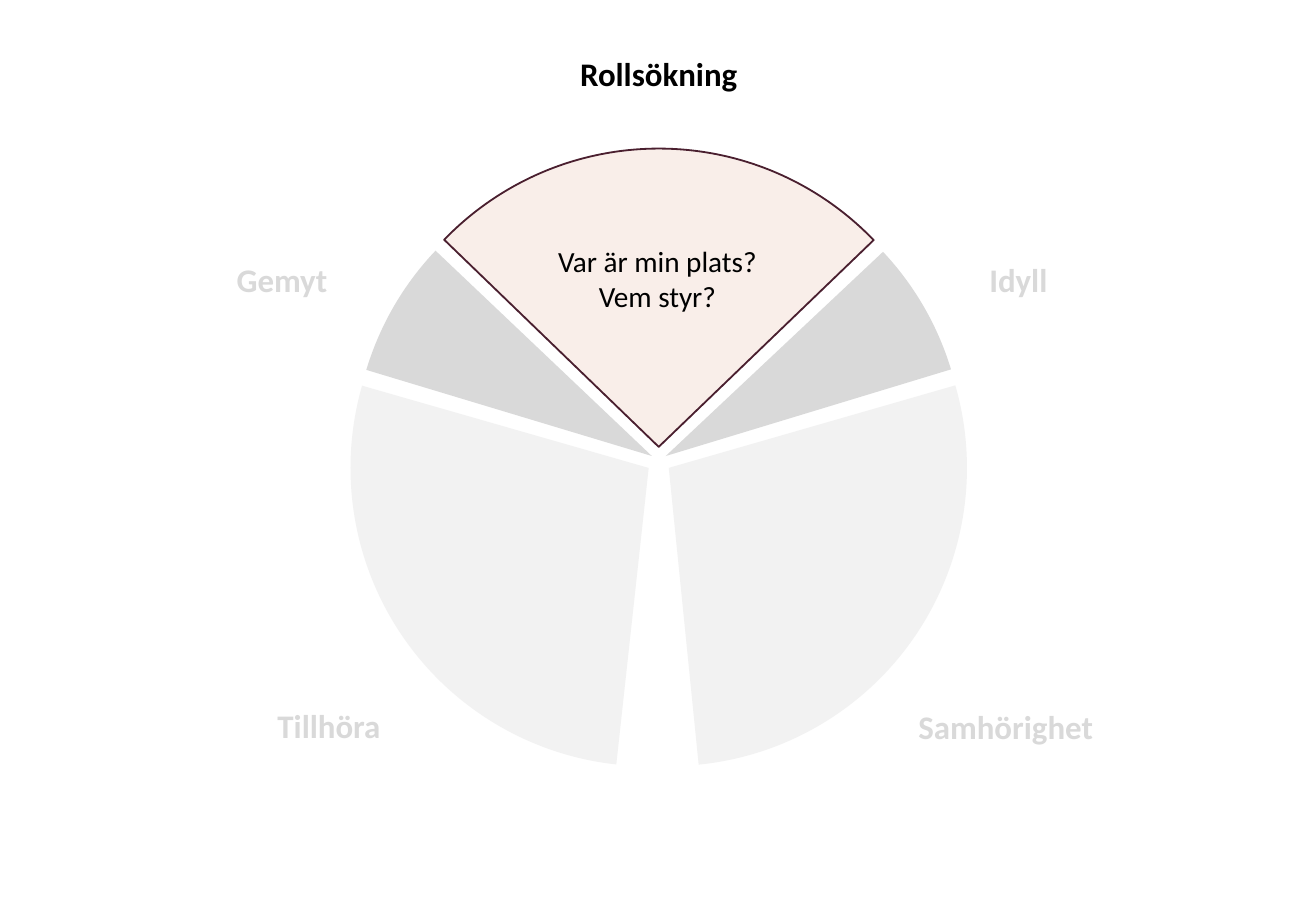
"""Build a slide with a five-part wheel that highlights the role-seeking stage."""
from pptx import Presentation
from pptx.dml.color import RGBColor
from pptx.enum.shapes import MSO_SHAPE
from pptx.enum.text import MSO_AUTO_SIZE, PP_ALIGN
from pptx.util import Pt

PIE = MSO_SHAPE.PIE
FIT = MSO_AUTO_SIZE.SHAPE_TO_FIT_TEXT
CENTER, LEFT = PP_ALIGN.CENTER, PP_ALIGN.LEFT

FONT = "Calibri"
BLACK, ROSE, PLUM = "000000", "F9EEE9", "4A1F2F"
PALE, GREY = "F2F2F2", "D9D9D9"
HUB_X, HUB_Y, DIAMETER = 360.4, 244.4, 326.2

# offset x, offset y, rotation, start angle, end angle, fill, outline
SLICES = [
    (0, 0, 60.9, 163.07, 255.22, ROSE, PLUM),
    (-5.5, 11.5, 301.9, 154.33, 254.11, PALE, None),
    (5.5, 11.5, 176.6, 167.34, 267.65, PALE, None),
    (3.8, 5, 157, 159.78, 186.1, GREY, None),
    (-3.8, 5, 39.1, 157.66, 184.39, GREY, None),
]

# lines, left, top, width, height, size, colour, bold, alignment
LABELS = [
    (["Var är min plats?", "Vem styr?"], 293.8, 129.6, 131.8, 46.8, 16, BLACK, False, CENTER),
    (["Rollsökning"], 310.3, 25.9, 100.8, 28.8, 18, BLACK, True, LEFT),
    (["Idyll"], 534.2, 138.2, 46.8, 28.8, 18, GREY, True, LEFT),
    (["Gemyt"], 122.4, 138.2, 64.8, 28.8, 18, GREY, True, LEFT),
    (["Samhörighet"], 495.4, 382.7, 110.9, 28.8, 18, GREY, True, LEFT),
    (["Tillhöra"], 144.7, 382.5, 71.3, 28.8, 18, GREY, True, LEFT),
]


def rgb(value):
    """Turn a hex string into a colour."""
    return RGBColor.from_string(value)


def add_slice(slide, dx, dy, rotation, start, end, fill, outline):
    """Draw one wheel slice, shifted from the hub."""
    left, top = HUB_X + dx - DIAMETER / 2, HUB_Y + dy - DIAMETER / 2
    sp = slide.shapes.add_shape(PIE, Pt(left), Pt(top), Pt(DIAMETER), Pt(DIAMETER))
    sp.rotation = rotation
    for i, angle in enumerate((start, end)):
        sp.adjustments[i] = angle * 0.6
    sp.shadow.inherit = False
    sp.fill.solid()
    sp.fill.fore_color.rgb = rgb(fill)
    if outline:
        sp.line.color.rgb = rgb(outline)
        sp.line.width = Pt(1)
    else:
        sp.line.fill.background()


def add_label(slide, lines, left, top, width, height, size, color, bold, align):
    """Add a text box with one paragraph per line."""
    tf = slide.shapes.add_textbox(Pt(left), Pt(top), Pt(width), Pt(height)).text_frame
    tf.text = "\n".join(lines)
    tf.word_wrap = False
    tf.auto_size = FIT
    for p in tf.paragraphs:
        p.alignment = align
        for r in p.runs:
            r.font.name = FONT
            r.font.size = Pt(size)
            r.font.bold = bold
            r.font.color.rgb = rgb(color)


def main():
    """Build and save the presentation."""
    prs = Presentation()
    prs.slide_width, prs.slide_height = Pt(720), Pt(500.4)
    slide = prs.slides.add_slide(prs.slide_layouts[6])
    for item in SLICES:
        add_slice(slide, *item)
    for item in LABELS:
        add_label(slide, *item)
    prs.save("out.pptx")


if __name__ == "__main__":
    main()
